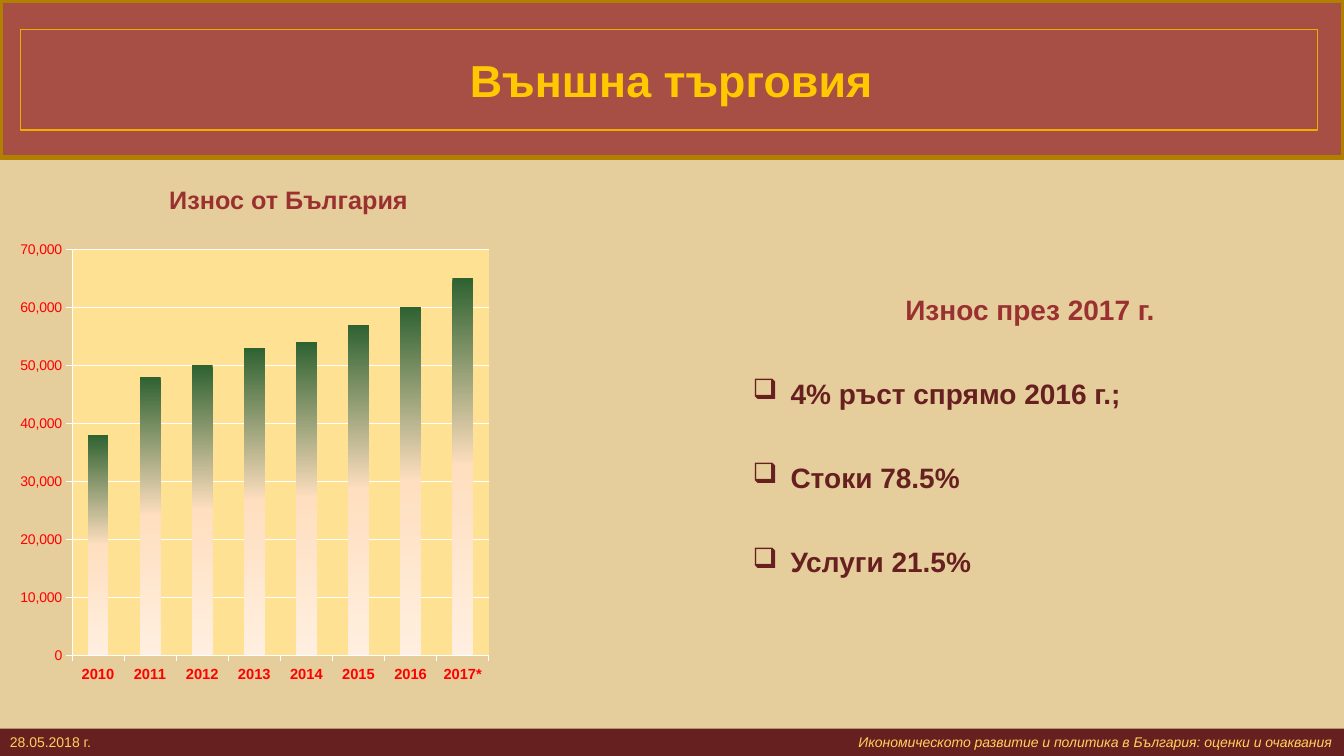
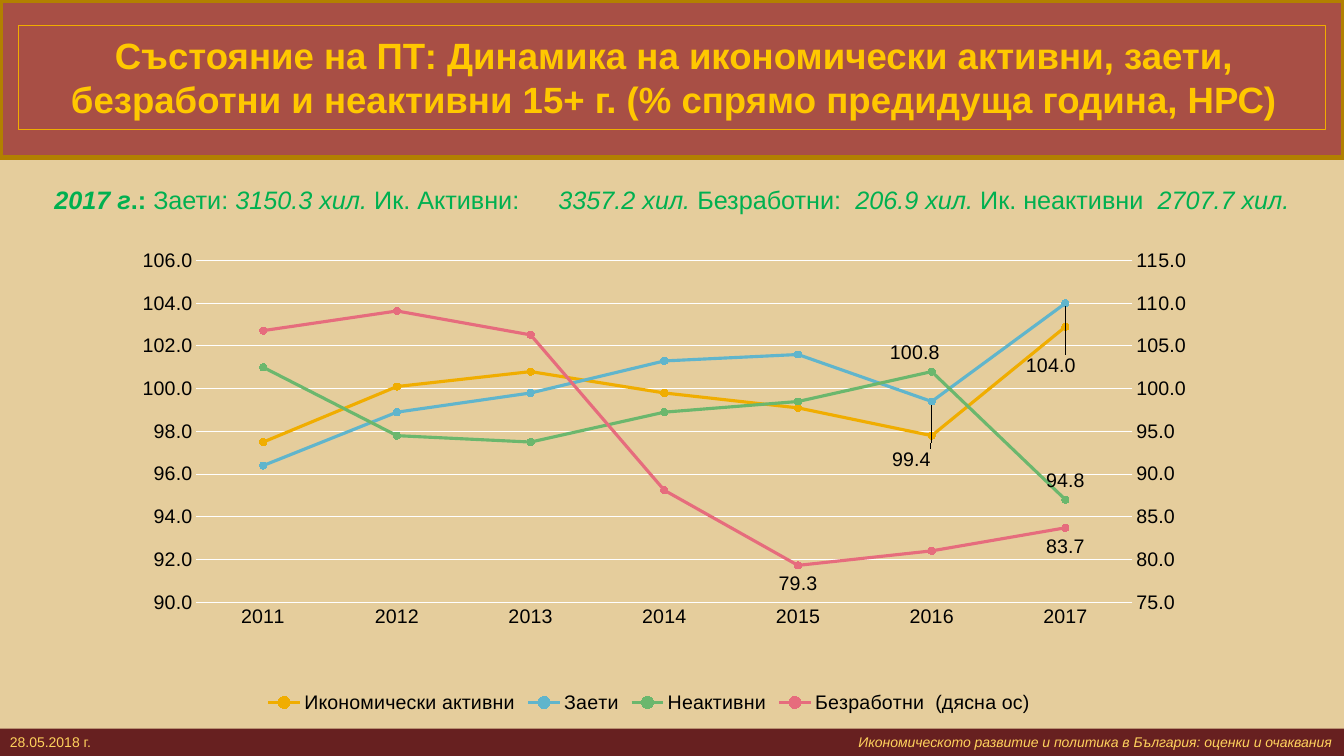
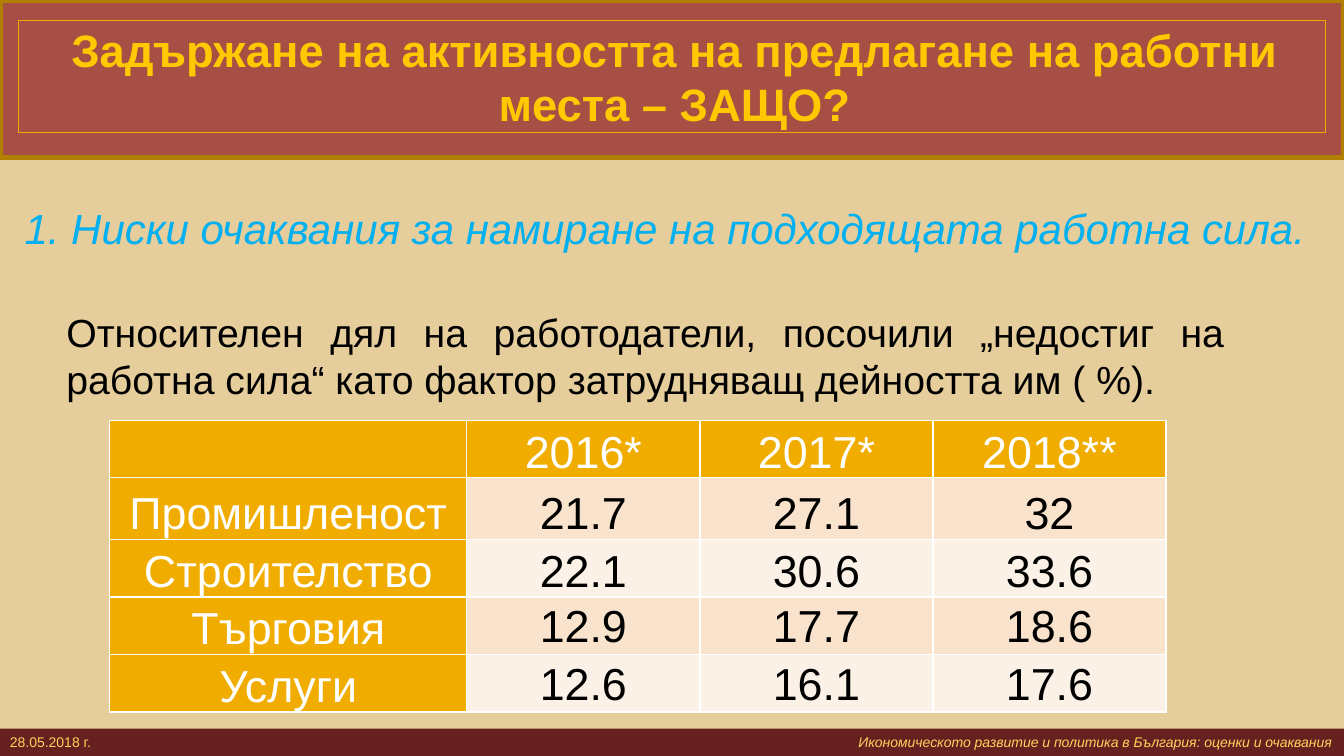
from copy import deepcopy

from pptx import Presentation
from pptx.chart.data import CategoryChartData
from pptx.dml.color import RGBColor
from pptx.enum.chart import (XL_CHART_TYPE, XL_LABEL_POSITION, XL_LEGEND_POSITION,
                             XL_MARKER_STYLE, XL_TICK_MARK)
from pptx.enum.shapes import MSO_SHAPE
from pptx.enum.text import MSO_ANCHOR, MSO_AUTO_SIZE, PP_ALIGN
from pptx.oxml import parse_xml
from pptx.oxml.ns import nsdecls, qn
from pptx.util import Pt

COLS = XL_CHART_TYPE.COLUMN_CLUSTERED
LINES = XL_CHART_TYPE.LINE_MARKERS
ABOVE, BELOW = XL_LABEL_POSITION.ABOVE, XL_LABEL_POSITION.BELOW
BOTTOM = XL_LEGEND_POSITION.BOTTOM
DOT = XL_MARKER_STYLE.CIRCLE
OUT, NONE = XL_TICK_MARK.OUTSIDE, XL_TICK_MARK.NONE
RECT = MSO_SHAPE.RECTANGLE
MID, LOW, TOP = MSO_ANCHOR.MIDDLE, MSO_ANCHOR.BOTTOM, MSO_ANCHOR.TOP
FIXED = MSO_AUTO_SIZE.NONE
LEFT, CENTER, JUST = PP_ALIGN.LEFT, PP_ALIGN.CENTER, PP_ALIGN.JUSTIFY

FONT = "Arial"
SAND = RGBColor(0xE5, 0xCD, 0x9C)
BRICK = RGBColor(0xA8, 0x4F, 0x45)
BRONZE = RGBColor(0xB2, 0x80, 0x00)
AMBER = RGBColor(0xF0, 0xAD, 0x00)
GOLD = RGBColor(0xFF, 0xC8, 0x00)
WINE = RGBColor(0x67, 0x20, 0x20)
PALE = RGBColor(0xFF, 0xD2, 0x5D)
RUST = RGBColor(0x9A, 0x31, 0x30)
RED = RGBColor(0xFF, 0x00, 0x00)
CREAM = RGBColor(0xFF, 0xE1, 0x93)
GREEN = RGBColor(0x00, 0xB0, 0x50)
SKY = RGBColor(0x00, 0xB0, 0xF0)
BLUE = RGBColor(0x60, 0xB5, 0xCC)
LEAF = RGBColor(0x6B, 0xB7, 0x6D)
ROSE = RGBColor(0xE6, 0x6C, 0x7D)
PEACH = RGBColor(0xF9, 0xE3, 0xCC)
MILK = RGBColor(0xFC, 0xF1, 0xE7)
WHITE = RGBColor(0xFF, 0xFF, 0xFF)
BLACK = RGBColor(0x00, 0x00, 0x00)
FADE = ((0, "2F6231"), (50, "FFDFBF"), (100, "FFEFE0"))

WIDE, HIGH = 960, 540
DATE = "28.05.2018 г."
TOPIC = "Икономическото развитие и политика в България: оценки и очаквания"


def place(box):
    """Turn a box in points into lengths."""
    return [Pt(side) for side in box]


def style(font, size, color, bold=False, italic=None):
    """Set the look of a font."""
    font.name, font.size, font.bold, font.italic = FONT, Pt(size), bold, italic
    font.color.rgb = color


def stroke(line, color, width=0.75):
    """Set a solid line."""
    line.color.rgb = color
    line.width = Pt(width)


def block(slide, box, fill):
    """Add a plain filled rectangle."""
    shape = slide.shapes.add_shape(RECT, *place(box))
    shape.shadow.inherit = False
    shape.fill.solid()
    shape.fill.fore_color.rgb = fill
    shape.line.fill.background()
    return shape


def footer(slide):
    """Add the bottom bar with date and topic."""
    bar = block(slide, (0, 520.5, WIDE, 19.5), WINE)
    bar.text_frame.vertical_anchor = MID
    par = bar.text_frame.paragraphs[0]
    par.alignment = LEFT
    style(par.font, 10, PALE)
    par.add_run().text = DATE + "\t"
    topic = par.add_run()
    topic.text = TOPIC
    topic.font.italic = True
    par._p.get_or_add_pPr().insert(0, parse_xml(
        f'<a:tabLst {nsdecls("a")}><a:tab pos="{Pt(944)}" algn="r"/></a:tabLst>'))


def page(deck, text, box, size):
    """Add a slide with its band, title and footer."""
    slide = deck.slides.add_slide(deck.slide_layouts[5])
    band = block(slide, (0, 0, WIDE, 112.5), BRICK)
    stroke(band.line, BRONZE, 3.78)
    slide.shapes._spTree.insert(2, band._element)
    title = slide.shapes.title
    title.left, title.top, title.width, title.height = place(box)
    stroke(title.line, AMBER)
    frame = title.text_frame
    frame.text = text
    frame.auto_size, frame.vertical_anchor = FIXED, MID
    frame.margin_right = Pt(3.6)
    par = frame.paragraphs[0]
    par.alignment = CENTER
    style(par.font, size, GOLD, True)
    footer(slide)
    return slide


def label(slide, box, lines, size, color, bold=False, italic=None, align=LEFT, anchor=MID):
    """Add a text box and return its paragraphs."""
    frame = slide.shapes.add_textbox(*place(box)).text_frame
    frame.word_wrap, frame.vertical_anchor = True, anchor
    frame.text = "\n".join(lines)
    for par in frame.paragraphs:
        par.alignment = align
        style(par.font, size, color, bold, italic)
    return frame.paragraphs


def bullet(par, mark):
    """Give a paragraph a hanging bullet."""
    props = par._p.get_or_add_pPr()
    props.set("marL", str(Pt(27)))
    props.set("indent", str(-Pt(27)))
    node = parse_xml(f'<a:buChar {nsdecls("a")} char="{mark}"/>')
    props.insert_element_before(node, "a:tabLst", "a:defRPr", "a:extLst")


def layout(tag, **parts):
    """Build a manual chart layout."""
    inner = "".join(f'<c:{key} val="{val}"/>' for key, val in parts.items())
    return parse_xml(f'<c:{tag} {nsdecls("c")}><c:manualLayout>{inner}'
                     f'</c:manualLayout></c:{tag}>')


def graph(slide, kind, box, cats, rows, fmt, size, color, plot):
    """Add a chart with a fixed plot area."""
    data = CategoryChartData(number_format=fmt)
    data.categories = cats
    for name, vals in rows:
        data.add_series(name, vals)
    chart = slide.shapes.add_chart(kind, *place(box), data).chart
    chart.has_title = chart.has_legend = False
    style(chart.font, size, color)
    chart.plots[0].vary_by_categories = False
    area = chart.element.xpath("c:chart/c:plotArea")[0]
    for old in area.findall(qn("c:layout")):
        area.remove(old)
    left, top, width, height = plot
    area.insert(0, layout("layout", layoutTarget="inner", xMode="edge", yMode="edge",
                          x=left, y=top, w=width, h=height))
    return chart, area


def scale(axis, low, high, step, fmt):
    """Set the range, grid and format of a value axis."""
    axis.minimum_scale, axis.maximum_scale, axis.major_unit = low, high, step
    axis.has_major_gridlines = True
    stroke(axis.major_gridlines.format.line, WHITE)
    axis.tick_labels.number_format = fmt
    axis.tick_labels.number_format_is_linked = False


def bars(slide):
    """Add the export column chart."""
    cats = [str(year) for year in range(2010, 2017)] + ["2017*"]
    vals = (38000, 48000, 50000, 53000, 54000, 57000, 60000, 65000)
    chart, area = graph(slide, COLS, (0, 157.7, 360, 365.8), cats, [("Износ", vals)],
                        "#,##0", 10, RED, (0.143, 0.056, 0.827, 0.793))
    chart.plots[0].gap_width = 150
    scale(chart.value_axis, 0, 70000, 10000, "#,##0")
    for axis in (chart.category_axis, chart.value_axis):
        axis.major_tick_mark = OUT
        stroke(axis.format.line, WHITE)
    style(chart.category_axis.tick_labels.font, 10.5, RED, True)
    series = chart.plots[0].series[0]
    series.format.line.fill.background()
    stops = "".join(f'<a:gs pos="{pos * 1000}"><a:srgbClr val="{tone}"/></a:gs>'
                    for pos, tone in FADE)
    area.xpath(".//c:ser/c:spPr")[0].insert(0, parse_xml(
        f'<a:gradFill {nsdecls("a")} rotWithShape="1"><a:gsLst>{stops}</a:gsLst>'
        '<a:lin ang="5400000" scaled="0"/></a:gradFill>'))
    area.append(parse_xml(f'<c:spPr {nsdecls("c", "a")}><a:solidFill>'
                          f'<a:srgbClr val="{CREAM}"/></a:solidFill></c:spPr>'))


def tag(series, marks):
    """Label chosen points, shifting some of them."""
    labels = series.data_labels
    labels.show_value = False
    labels.number_format, labels.number_format_is_linked = "0.0", False
    for index, (spot, right, down) in marks.items():
        series.points[index].data_label.position = spot
        if right or down:
            node = series._element.xpath(f"c:dLbls/c:dLbl[c:idx/@val='{index}']")[0]
            node.insert(1, layout("layout", x=right, y=down))


def second(area, low, high, step):
    """Move the last series to an axis on the right."""
    main = area.find(qn("c:lineChart"))
    twin = deepcopy(main)
    main.remove(main.findall(qn("c:ser"))[-1])
    for row in twin.findall(qn("c:ser"))[:-1]:
        twin.remove(row)
    main.addnext(twin)
    cat, val = (deepcopy(area.find(qn(name))) for name in ("c:catAx", "c:valAx"))
    ids = {cat.find(qn("c:axId")).get("val"): "5001", val.find(qn("c:axId")).get("val"): "5002"}
    for part in (twin, cat, val):
        for node in part.xpath("c:axId | c:crossAx"):
            node.set("val", ids[node.get("val")])
    cat.find(qn("c:delete")).set("val", "1")
    val.remove(val.find(qn("c:majorGridlines")))
    for key, value in (("axPos", "r"), ("crosses", "max"), ("majorUnit", step),
                       ("scaling/c:min", low), ("scaling/c:max", high)):
        val.xpath("c:" + key)[0].set("val", str(value))
    area.findall(qn("c:valAx"))[-1].addnext(val)
    val.addnext(cat)


def trend(slide):
    """Add the labour market line chart."""
    rows = (
        ("Икономически активни", (97.5, 100.1, 100.8, 99.8, 99.1, 97.8, 102.9), AMBER, {}),
        ("Заети", (96.4, 98.9, 99.8, 101.3, 101.6, 99.4, 104.0), BLUE,
         {5: (BELOW, -0.018, 0.08), 6: (BELOW, -0.013, 0.09)}),
        ("Неактивни", (101.0, 97.8, 97.5, 98.9, 99.4, 100.8, 94.8), LEAF,
         {5: (ABOVE, -0.015, 0), 6: (ABOVE, 0, 0)}),
        ("Безработни  (дясна ос)", (106.8, 109.1, 106.3, 88.1, 79.3, 81.0, 83.7), ROSE,
         {4: (BELOW, 0, 0), 6: (BELOW, 0, 0)}),
    )
    cats = [str(year) for year in range(2011, 2018)]
    chart, area = graph(slide, LINES, (60.5, 162, 806.4, 350.6), cats,
                        [row[:2] for row in rows], "0.0", 14, BLACK,
                        (0.099, 0.069, 0.829, 0.696))
    for series, (_, _, color, marks) in zip(chart.plots[0].series, rows):
        series.smooth = False
        stroke(series.format.line, color, 2.25)
        dot = series.marker
        dot.style, dot.size = DOT, 5
        dot.format.fill.solid()
        dot.format.fill.fore_color.rgb = color
        stroke(dot.format.line, color)
        if marks:
            tag(series, marks)
    scale(chart.value_axis, 90, 106, 2, "0.0")
    chart.value_axis.format.line.fill.background()
    stroke(chart.category_axis.format.line, WHITE)
    for axis in (chart.category_axis, chart.value_axis):
        axis.major_tick_mark = NONE
    chart.has_legend = True
    chart.legend.position = BOTTOM
    chart.legend.include_in_layout = False
    style(chart.legend.font, 14, BLACK)
    second(area, 75, 115, 5)


def edge(cell):
    """Draw white borders around a cell."""
    props = cell._tc.get_or_add_tcPr()
    for spot, side in enumerate(("lnL", "lnR", "lnT", "lnB")):
        props.insert(spot, parse_xml(
            f'<a:{side} {nsdecls("a")} w="{Pt(1)}"><a:solidFill>'
            f'<a:srgbClr val="{WHITE}"/></a:solidFill></a:{side}>'))


def grid(slide, rows):
    """Add the table of shares."""
    table = slide.shapes.add_table(5, 4, *place((78.5, 300.2, 754.5, 208))).table
    table.first_row = table.horz_banding = False
    for col, width in zip(table.columns, (255, 166.5, 166.5, 166.5)):
        col.width = Pt(width)
    for row, height in zip(table.rows, (41, 44, 41, 41, 41)):
        row.height = Pt(height)
    for down, row in enumerate(rows):
        for across, text in enumerate(row):
            cell = table.cell(down, across)
            head = down == 0 or across == 0
            cell.text = text
            cell.fill.solid()
            cell.fill.fore_color.rgb = AMBER if head else PEACH if down % 2 else MILK
            cell.vertical_anchor = LOW if head or down < 3 else MID
            cell.margin_left = cell.margin_right = Pt(3.6)
            cell.margin_top = cell.margin_bottom = 0
            par = cell.text_frame.paragraphs[0]
            par.alignment, par.line_spacing = CENTER, 1.07
            style(par.font, 32, WHITE if head else BLACK)
            edge(cell)


def trade(deck):
    """Build the foreign trade slide."""
    slide = page(deck, "Външна търговия", (14.4, 20.9, 926.6, 72), 32)
    bars(slide)
    pars = label(slide, (530.6, 181.4, 410.4, 237.6),
                 ("Износ през 2017 г.", "4% ръст спрямо 2016 г.;", "Стоки 78.5%", "Услуги 21.5%"),
                 20, WINE, True, anchor=TOP)
    pars[0].alignment, pars[0].line_spacing = CENTER, 2.0
    pars[0].font.color.rgb = RUST
    for par in pars[1:]:
        par.line_spacing = 2.5
        bullet(par, "❑")
    label(slide, (113.8, 128.2, 187.2, 29), ["Износ от България"], 18, RUST, True, anchor=TOP)


def labour(deck):
    """Build the labour market slide."""
    slide = page(deck, "Състояние на ПТ: Динамика на икономически активни, заети, "
                 "безработни и неактивни 15+ г. (% спрямо предидуща година, НРС)",
                 (13.4, 18, 933.1, 74.2), 26.1)
    trend(slide)
    par = label(slide, (13.4, 128.2, 933.1, 29), [""], 18, GREEN, align=CENTER)[0]
    for text, bold, italic in (
            ("2017 г", True, True), (".: ", True, False),
            ("Заети: ", False, False), ("3150.3 хил. ", False, True),
            ("Ик. Активни: \t", False, False), ("3357.2 хил. ", False, True),
            ("Безработни:  ", False, False), ("206.9 хил. ", False, True),
            ("Ик. неактивни  ", False, False), ("2707.7 хил.", False, True)):
        run = par.add_run()
        run.text, run.font.bold, run.font.italic = text, bold, italic


def jobs(deck):
    """Build the job supply slide."""
    slide = page(deck, "Задържане на активността на предлагане на работни места – ЗАЩО?",
                 (13.4, 14.4, 933.1, 80.6), 32.4)
    label(slide, (10.5, 124, 940, 78),
          ["1. Ниски очаквания за намиране на подходящата работна сила."], 30, SKY, italic=True)
    label(slide, (40.3, 216, 841, 75),
          ["Относителен дял на работодатели, посочили „недостиг на работна сила“ "
           "като фактор затрудняващ дейността им ( %)."], 28, BLACK, align=JUST)
    grid(slide, (("", "2016*", "2017*", "2018**"),
                 ("Промишленост", "21.7", "27.1", "32"),
                 ("Строителство", "22.1", "30.6", "33.6"),
                 ("Търговия", "12.9", "17.7", "18.6"),
                 ("Услуги", "12.6", "16.1", "17.6")))


def main():
    """Build and save the deck."""
    deck = Presentation()
    deck.slide_width, deck.slide_height = Pt(WIDE), Pt(HIGH)
    back = deck.slide_master.background.fill
    back.solid()
    back.fore_color.rgb = SAND
    for build in (trade, labour, jobs):
        build(deck)
    deck.save("out.pptx")


if __name__ == "__main__":
    main()
